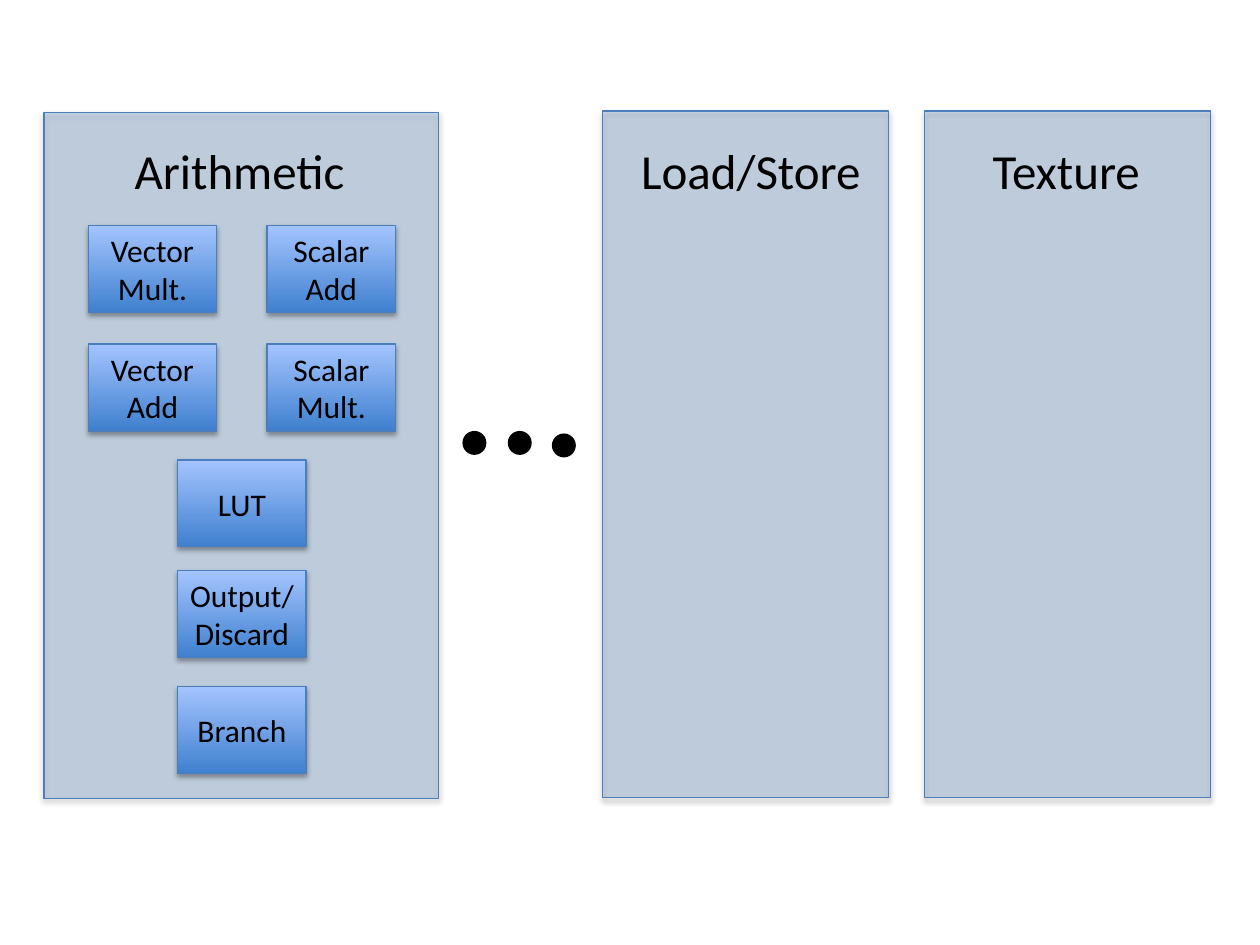
from lxml import etree
from pptx import Presentation
from pptx.dml.color import RGBColor
from pptx.enum.shapes import MSO_SHAPE
from pptx.enum.text import MSO_ANCHOR, MSO_AUTO_SIZE, PP_ALIGN
from pptx.oxml.ns import qn
from pptx.util import Inches, Pt

RECT, OVAL = MSO_SHAPE.RECTANGLE, MSO_SHAPE.OVAL
LEFT, CENTER = PP_ALIGN.LEFT, PP_ALIGN.CENTER
MIDDLE, FIT_SHAPE = MSO_ANCHOR.MIDDLE, MSO_AUTO_SIZE.SHAPE_TO_FIT_TEXT


def rgb(value):
    return RGBColor.from_string(value)


class Diagram:
    FONT, TEXT, LINE = "Calibri", "000000", "4B7EBC"
    PANEL, PANEL_ALPHA = "4F81BD", 27
    GRADIENT = ("3F80CE", "A4C4FF")

    def __init__(self, slide):
        self.slide = slide
        self.shapes = slide.shapes

    def shape(self, kind, *box):
        sp = self.shapes.add_shape(kind, *map(Inches, box))
        sp.shadow.inherit = False
        return sp

    def outline_and_shadow(self, sp):
        sp.line.color.rgb = rgb(self.LINE)
        sp.line.width = Pt(0.75)
        effects = sp._element.spPr.find(qn("a:effectLst"))
        shadow = etree.SubElement(
            effects, qn("a:outerShdw"), blurRad=str(Pt(3.1)),
            dist=str(Pt(1.8)), dir="5400000", rotWithShape="0")
        color = etree.SubElement(shadow, qn("a:srgbClr"), val="000000")
        etree.SubElement(color, qn("a:alpha"), val="35000")

    def label(self, tf, text, size, align, **frame):
        for name, value in frame.items():
            setattr(tf, name, value)
        p = tf.paragraphs[0]
        p.alignment = align
        r = p.add_run()
        r.text = text
        for name, value in {"name": self.FONT, "size": Pt(size)}.items():
            setattr(r.font, name, value)
        r.font.color.rgb = rgb(self.TEXT)

    def panel(self, *box):
        sp = self.shape(RECT, *box)
        sp.fill.solid()
        sp.fill.fore_color.rgb = rgb(self.PANEL)
        color = sp._element.spPr.find(qn("a:solidFill"))[0]
        etree.SubElement(color, qn("a:alpha"), val=str(self.PANEL_ALPHA * 1000))
        self.outline_and_shadow(sp)

    def title(self, text, *box):
        tb = self.shapes.add_textbox(*map(Inches, box))
        self.label(tb.text_frame, text, 28, LEFT,
                   word_wrap=False, auto_size=FIT_SHAPE)

    def unit(self, text, left, top):
        sp = self.shape(RECT, left, top, 1.02, 0.69)
        sp.fill.gradient()
        sp.fill.gradient_angle = 90
        for stop, color in zip(sp.fill.gradient_stops, self.GRADIENT):
            stop.color.rgb = rgb(color)
        self.outline_and_shadow(sp)
        self.label(sp.text_frame, text, 18, CENTER,
                   word_wrap=True, vertical_anchor=MIDDLE,
                   margin_left=Inches(0.05), margin_right=Inches(0.05))

    def dot(self, left, top):
        sp = self.shape(OVAL, left, top, 0.19, 0.19)
        sp.fill.solid()
        sp.fill.fore_color.rgb = rgb(self.TEXT)
        sp.line.fill.background()


def main():
    prs = Presentation()
    prs.slide_width, prs.slide_height = Inches(10), Inches(7.5)
    d = Diagram(prs.slides.add_slide(prs.slide_layouts[6]))

    # Arithmetic pipeline, grouped
    d.shapes = d.slide.shapes.add_group_shape().shapes
    d.panel(0.35, 0.89, 3.13, 5.45)
    d.title("Arithmetic", 0.97, 1.07, 1.89, 0.57)
    pairs = [("Vector Mult.", "Scalar Add"), ("Vector Add", "Scalar Mult.")]
    for row, pair in enumerate(pairs):
        for col, text in enumerate(pair):
            d.unit(text, 0.7 + 1.42 * col, 1.79 + 0.94 * row)
    for text, top in (("LUT", 3.65), ("Output/Discard", 4.53), ("Branch", 5.45)):
        d.unit(text, 1.41, top)
    d.shapes = d.slide.shapes

    # Ellipsis between the pipelines
    for left, top in ((3.67, 3.42), (4.03, 3.42), (4.38, 3.44)):
        d.dot(left, top)

    # Load/Store and Texture pipelines
    for text, left, text_left, text_width in (
            ("Load/Store", 4.78, 4.99, 1.97), ("Texture", 7.34, 7.78, 1.43)):
        d.panel(left, 0.88, 2.27, 5.45)
        d.title(text, text_left, 1.07, text_width, 0.57)

    prs.save("out.pptx")


if __name__ == "__main__":
    main()
